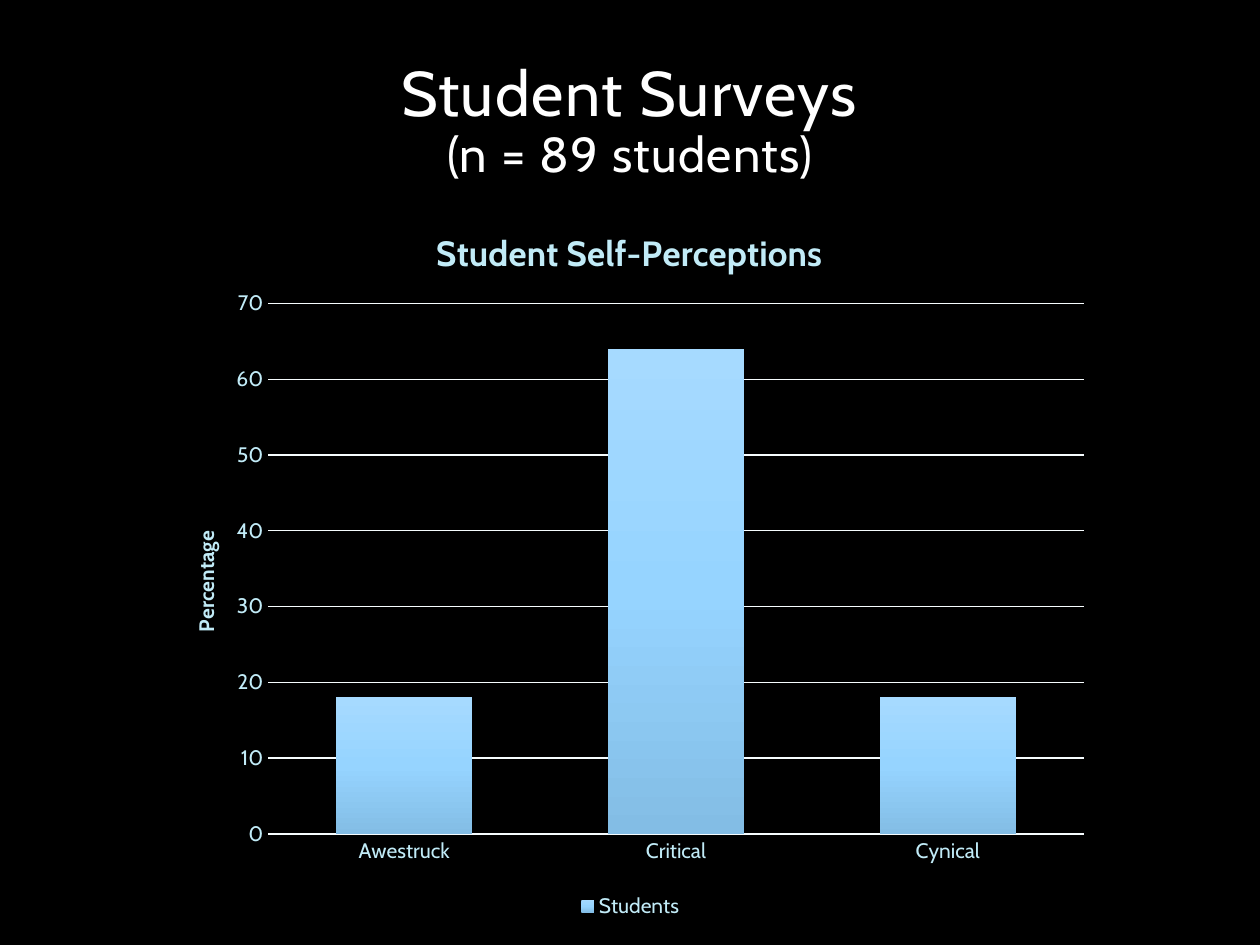
"""Build the student survey slide with its self-perception column chart."""
from pptx import Presentation
from pptx.chart.data import CategoryChartData
from pptx.dml.color import RGBColor
from pptx.enum import chart as ce, text
from pptx.oxml import parse_xml
from pptx.oxml.ns import nsdecls, qn
from pptx.util import Cm, Pt

BLACK = RGBColor(0x00, 0x00, 0x00)
WHITE = RGBColor(0xFF, 0xFF, 0xFF)
PALE_BLUE = RGBColor(0xC1, 0xEB, 0xF7)
RULE = RGBColor(0xF6, 0xFC, 0xFE)
BAR_STOPS = [
    (0, RGBColor(0xA6, 0xDA, 0xFF)),
    (50, RGBColor(0x96, 0xD4, 0xFF)),
    (100, RGBColor(0x83, 0xBD, 0xE5)),
]
FONT = "Cabin"


def set_font(font, size, color, bold=False):
    font.name, font.size, font.bold = FONT, Pt(size), bold
    font.color.rgb = color


def place(element, index, **fractions):
    for old in element.findall(qn("c:layout")):
        element.remove(old)
    target = '<c:layoutTarget val="inner"/>' if "w" in fractions else ""
    modes = "".join(f'<c:{key}Mode val="edge"/>' for key in "xy")
    values = "".join(f'<c:{key} val="{value}"/>' for key, value in fractions.items())
    element.insert(index, parse_xml(
        f'<c:layout {nsdecls("c")}><c:manualLayout>{target}{modes}{values}'
        "</c:manualLayout></c:layout>"))


prs = Presentation()
prs.slide_width, prs.slide_height = Cm(25.4), Cm(19.05)
slide = prs.slides.add_slide(prs.slide_layouts[5])
slide.background.fill.solid()
slide.background.fill.fore_color.rgb = BLACK

heading = slide.shapes.title
heading.left, heading.top, heading.width, heading.height = Cm(3.18), Cm(1.07), Cm(19.05), Cm(2.74)
frame = heading.text_frame
frame.text = "Student Surveys\v(n = 89 students)"
frame.auto_size = text.MSO_AUTO_SIZE.NONE
frame.word_wrap = True
frame.vertical_anchor = text.MSO_ANCHOR.BOTTOM
heading_line = frame.paragraphs[0]
heading_line.alignment = text.PP_ALIGN.CENTER
heading_line.line_spacing = 0.9
for run, size in zip(heading_line.runs, (36, 28)):
    set_font(run.font, size, WHITE)
    run._r.get_or_add_rPr().set("spc", "80")

survey = CategoryChartData()
survey.categories = ["Awestruck", "Critical", "Cynical"]
survey.add_series("Students", [18, 64, 18])
chart = slide.shapes.add_chart(
    ce.XL_CHART_TYPE.COLUMN_CLUSTERED, Cm(3.18), Cm(3.81), Cm(19.05), Cm(14.81), survey).chart
set_font(chart.font, 10, WHITE)
place(chart._chartSpace.chart.plotArea, 0, x=0.117, y=0.156, w=0.863, h=0.722)

perceptions = chart.plots[0]
perceptions.gap_width, perceptions.overlap = 100, -24
perceptions.vary_by_categories = False
stops = "".join(
    f'<a:gs pos="{position * 1000}"><a:srgbClr val="{color}"/></a:gs>'
    for position, color in BAR_STOPS)
perceptions.series[0]._element.get_or_add_spPr().append(parse_xml(
    f'<a:gradFill {nsdecls("a")} rotWithShape="1"><a:gsLst>{stops}</a:gsLst>'
    '<a:lin ang="5400000" scaled="0"/></a:gradFill>'))

answers, percentage = chart.category_axis, chart.value_axis
for axis in (answers, percentage):
    axis.major_tick_mark = axis.minor_tick_mark = ce.XL_TICK_MARK.NONE
    set_font(axis.tick_labels.font, 12, PALE_BLUE)
percentage.minimum_scale, percentage.maximum_scale, percentage.major_unit = 0, 70, 10
percentage.format.line.fill.background()
for line in (answers.format.line, percentage.major_gridlines.format.line):
    line.color.rgb = RULE
    line.width = Pt(0.75)

for title, wording, size, x, y in (
    (chart.chart_title, "Student Self-Perceptions", 20, 0.288, 0.045),
    (percentage.axis_title, "Percentage", 12, 0.032, 0.46),
):
    title.text_frame.text = wording
    set_font(title.text_frame.paragraphs[0].runs[0].font, size, PALE_BLUE, bold=True)
    place(title._element, 1, x=x, y=y)
percentage.axis_title.text_frame._txBody.bodyPr.set("rot", "-5400000")
percentage.axis_title.text_frame._txBody.bodyPr.set("vert", "horz")

chart.has_legend = True
chart.legend.position = ce.XL_LEGEND_POSITION.BOTTOM
chart.legend.include_in_layout = False
set_font(chart.legend.font, 12, PALE_BLUE)

prs.save("out.pptx")
